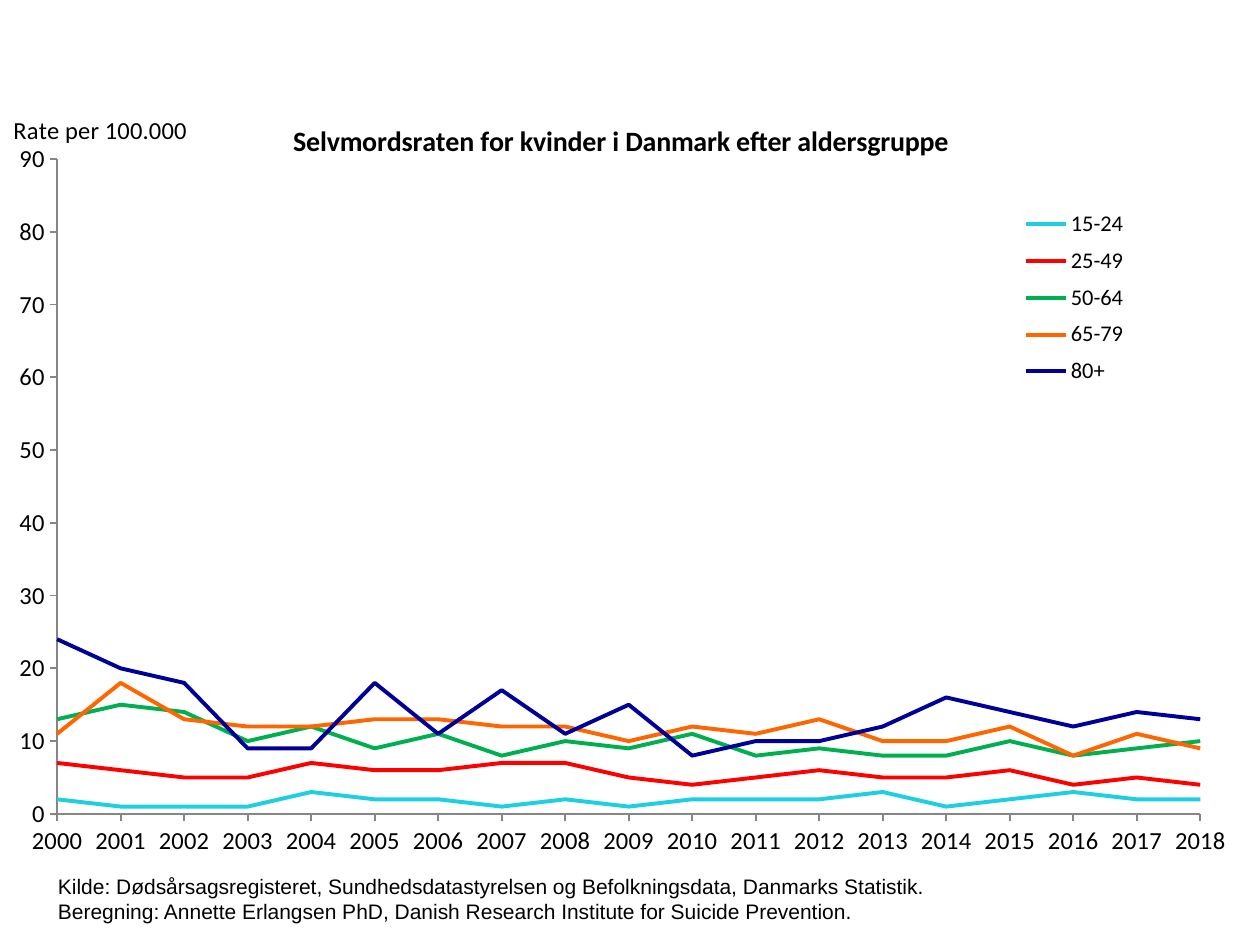
import pptx
import pptx.chart.data
import pptx.dml.color
import pptx.enum.chart
import pptx.oxml
import pptx.oxml.ns
import pptx.util

Inches, Pt = pptx.util.Inches, pptx.util.Pt
qn = pptx.oxml.ns.qn

YEARS = [str(year) for year in range(2000, 2019)]
AGE_GROUPS = [
    ("15-24", "1ECFE2", (2, 1, 1, 1, 3, 2, 2, 1, 2, 1, 2, 2, 2, 3, 1, 2, 3, 2, 2)),
    ("25-49", "FF0000", (7, 6, 5, 5, 7, 6, 6, 7, 7, 5, 4, 5, 6, 5, 5, 6, 4, 5, 4)),
    ("50-64", "00B050", (13, 15, 14, 10, 12, 9, 11, 8, 10, 9, 11, 8, 9, 8, 8, 10, 8, 9, 10)),
    ("65-79", "FF6600", (11, 18, 13, 12, 12, 13, 13, 12, 12, 10, 12, 11, 13, 10, 10, 12, 8, 11, 9)),
    ("80+", "000099", (24, 20, 18, 9, 9, 18, 11, 17, 11, 15, 8, 10, 10, 12, 16, 14, 12, 14, 13)),
]
SOURCES = [
    "Kilde: Dødsårsagsregisteret, Sundhedsdatastyrelsen og Befolkningsdata, Danmarks Statistik.",
    "Beregning: Annette Erlangsen PhD, Danish Research Institute for Suicide Prevention.",
]


def color(value):
    return pptx.dml.color.RGBColor.from_string(value)


def chart_xml(tag, attributes="", children=""):
    """Return a new element of the chart namespace."""
    return pptx.oxml.parse_xml(
        f"<c:{tag} {pptx.oxml.ns.nsdecls('c')} {attributes}>{children}</c:{tag}>")


def manual_layout(inner=False, **fractions):
    """Return a c:layout element placed by fractions of the chart's size."""
    settings = {"layoutTarget": "inner"} if inner else {}
    settings.update({f"{name}Mode": "edge" for name in ("x", "y")})
    settings.update(fractions)
    children = "".join(f'<c:{name} val="{value}"/>' for name, value in settings.items())
    return chart_xml("layout", children=f"<c:manualLayout>{children}</c:manualLayout>")


def place(parent, element, after=None):
    """Put the element in parent, after the named child or first, replacing its like."""
    for old in parent.findall(element.tag):
        parent.remove(old)
    if after:
        parent.find(qn(after)).addnext(element)
    else:
        parent.insert(0, element)


class Page:
    text_color = "000000"
    axis_color = "868686"
    chart_font = "Calibri"
    note_font = "Arial"

    def __init__(self, deck):
        self.slide = deck.slides.add_slide(deck.slide_layouts[6])

    def style(self, font, size, name, bold=False):
        values = {"size": Pt(size), "name": name, "bold": bold}
        for attribute, value in values.items():
            setattr(font, attribute, value)
        font.color.rgb = color(self.text_color)

    def title(self, title, text, size, bold, x, y):
        """Make a chart or axis title horizontal, at a fixed place."""
        frame = title.text_frame
        frame.text = text
        self.style(frame.paragraphs[0].runs[0].font, size, self.chart_font, bold)
        body = frame._txBody.find(qn("a:bodyPr"))
        body.set("rot", "0")
        body.set("vert", "horz")
        place(title._element, manual_layout(x=x, y=y), "c:tx")
        place(title._element, chart_xml("overlay", 'val="1"'), "c:layout")

    def axis(self, axis):
        axis.has_major_gridlines = False
        axis.major_tick_mark = pptx.enum.chart.XL_TICK_MARK.OUTSIDE
        axis.format.line.color.rgb = color(self.axis_color)
        axis.format.line.width = Pt(1)
        self.style(axis.tick_labels.font, 14, self.chart_font)

    def line_chart(self, left, top, width, height):
        data = pptx.chart.data.CategoryChartData(number_format="0")
        data.categories = YEARS
        for name, _, rates in AGE_GROUPS:
            data.add_series(name, rates)
        chart = self.slide.shapes.add_chart(
            pptx.enum.chart.XL_CHART_TYPE.LINE, Inches(left), Inches(top),
            Inches(width), Inches(height), data).chart
        self.style(chart.font, 14, self.chart_font)
        chart.plots[0].vary_by_categories = False
        for series, (_, line_color, _) in zip(chart.plots[0].series, AGE_GROUPS):
            series.smooth = False
            series.marker.style = pptx.enum.chart.XL_MARKER_STYLE.NONE
            series.format.line.color.rgb = color(line_color)
            series.format.line.width = Pt(2.25)

        years, rates = chart.category_axis, chart.value_axis
        for axis in (years, rates):
            self.axis(axis)
        scale = {"minimum_scale": 0, "maximum_scale": 90, "major_unit": 10}
        for attribute, value in scale.items():
            setattr(rates, attribute, value)
        rates.tick_labels.number_format = "0"
        rates.tick_labels.number_format_is_linked = False
        # The lines start on the value axis itself.
        years.crosses = pptx.enum.chart.XL_AXIS_CROSSES.AUTOMATIC
        place(rates._element, chart_xml("crossBetween", 'val="midCat"'), "c:crosses")

        self.title(chart.chart_title, "Selvmordsraten for kvinder i Danmark efter aldersgruppe",
                   16, True, 0.23, 0.04)
        self.title(rates.axis_title, "Rate per 100.000", 14, False, 0.01, 0.03)

        chart.has_legend = True
        legend = chart.legend
        legend.position = pptx.enum.chart.XL_LEGEND_POSITION.RIGHT
        legend.include_in_layout = False
        self.style(legend.font, 12.8, self.chart_font)
        place(legend._element, manual_layout(x=0.79, y=0.15, w=0.12, h=0.25), "c:legendPos")
        plot_area = chart._chartSpace.chart.plotArea
        place(plot_area, manual_layout(inner=True, x=0.048, y=0.095, w=0.901, h=0.848))

    def note(self, lines, left, top, width, height):
        box = self.slide.shapes.add_textbox(
            Inches(left), Inches(top), Inches(width), Inches(height))
        frame = box.text_frame
        settings = {"word_wrap": True, "margin_left": Inches(0.03),
                    "margin_top": Inches(0.03), "margin_right": 0, "margin_bottom": 0}
        for attribute, value in settings.items():
            setattr(frame, attribute, value)
        frame.text = "\n".join(lines)
        for para in frame.paragraphs:
            self.style(para.runs[0].font, 12, self.note_font)


def main():
    deck = pptx.Presentation()
    deck.slide_width, deck.slide_height = Inches(10), Inches(7.5)
    page = Page(deck)
    page.line_chart(-0.03, 0.68, 10.07, 6.13)
    page.note(SOURCES, 0.43, 6.9, 8.68, 0.43)
    deck.save("out.pptx")


if __name__ == "__main__":
    main()
